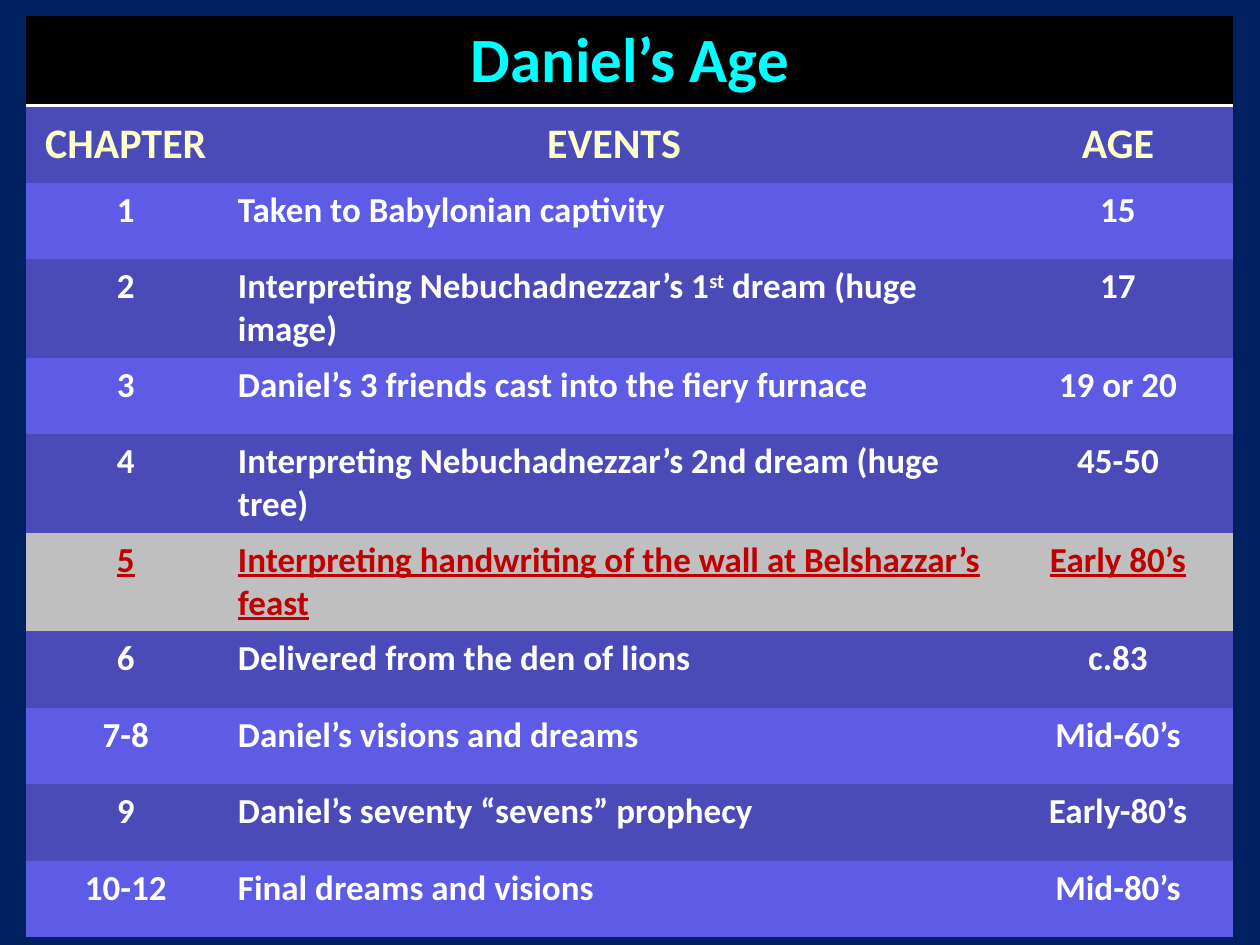
import dataclasses
import typing

import lxml.etree
import pptx
import pptx.dml.color
import pptx.enum.text
import pptx.oxml.ns
import pptx.util

Pt = pptx.util.Pt
RGBColor = pptx.dml.color.RGBColor
CENTER = pptx.enum.text.PP_ALIGN.CENTER
LEFT = pptx.enum.text.PP_ALIGN.LEFT
TOP = pptx.enum.text.MSO_ANCHOR.TOP
MIDDLE = pptx.enum.text.MSO_ANCHOR.MIDDLE


@dataclasses.dataclass(frozen=True)
class Theme:
    font: str = "Calibri"
    background: str = "002060"
    title_fill: str = "000000"
    title_text: str = "00FFFF"
    header_text: str = "FFFFCC"
    dark_band: str = "4A4AB9"
    light_band: str = "5C5CE7"
    highlight_fill: str = "BFBFBF"
    highlight_text: str = "C00000"
    body_text: str = "FFFFFF"
    rule: str = "FFFFFF"
    title_size: int = 36
    header_size: int = 24
    body_size: int = 20
    plain_table_style: str = "{2D5ABB26-0587-4C30-8999-92F81FD0307C}"


THEME = Theme()


class RowStyle(typing.NamedTuple):
    fill: str
    color: str
    size: int
    anchor: typing.Any = TOP
    underline: bool = False


class AgeRow(typing.NamedTuple):
    chapter: str
    event: str
    age: str
    height: float = 43.8
    highlighted: bool = False


TITLE = "Daniel’s Age"
TITLE_HEIGHT = 49
HEADER = AgeRow("CHAPTER", "EVENTS", "AGE")
TALL = 54
SUPERSCRIPT_MARK = "^"
AGE_ROWS = [
    AgeRow("1", "Taken to Babylonian captivity", "15"),
    AgeRow("2", "Interpreting Nebuchadnezzar’s 1^st^ dream (huge image)", "17", TALL),
    AgeRow("3", "Daniel’s 3 friends cast into the fiery furnace", "19 or 20"),
    AgeRow("4", "Interpreting Nebuchadnezzar’s 2nd dream (huge tree)", "45-50", TALL),
    AgeRow("5", "Interpreting handwriting of the wall at Belshazzar’s feast",
           "Early 80’s", TALL, True),
    AgeRow("6", "Delivered from the den of lions", "c.83"),
    AgeRow("7-8", "Daniel’s visions and dreams", "Mid-60’s"),
    AgeRow("9", "Daniel’s seventy “sevens” prophecy", "Early-80’s"),
    AgeRow("10-12", "Final dreams and visions", "Mid-80’s"),
]
COLUMN_WIDTHS = [113.8, 444.2, 131.8]
TITLE_STYLE = RowStyle(THEME.title_fill, THEME.title_text, THEME.title_size)
HEADER_STYLE = RowStyle(THEME.dark_band, THEME.header_text, THEME.header_size, MIDDLE)


def body_style(index: int, row: AgeRow) -> RowStyle:
    if row.highlighted:
        return RowStyle(THEME.highlight_fill, THEME.highlight_text,
                        THEME.body_size, underline=True)
    band = THEME.dark_band if index % 2 else THEME.light_band
    return RowStyle(band, THEME.body_text, THEME.body_size)


def fill_cell(cell: typing.Any, style: RowStyle) -> None:
    cell.fill.solid()
    cell.fill.fore_color.rgb = RGBColor.from_string(style.fill)


def write_cell(cell: typing.Any, text: str, style: RowStyle, alignment: typing.Any) -> None:
    cell.vertical_anchor = style.anchor
    paragraph = cell.text_frame.paragraphs[0]
    paragraph.alignment = alignment
    font_values = {"name": THEME.font, "size": Pt(style.size),
                   "bold": True, "underline": style.underline}
    for position, part in enumerate(text.split(SUPERSCRIPT_MARK)):
        run = paragraph.add_run()
        run.text = part
        for name, value in font_values.items():
            setattr(run.font, name, value)
        run.font.color.rgb = RGBColor.from_string(style.color)
        if position % 2:
            run._r.get_or_add_rPr().set("baseline", "30000")


def add_bottom_rule(cell: typing.Any, width: float) -> None:
    qualified = pptx.oxml.ns.qn
    line = lxml.etree.Element(qualified("a:lnB"), w=str(int(Pt(width))))
    solid_fill = lxml.etree.SubElement(line, qualified("a:solidFill"))
    lxml.etree.SubElement(solid_fill, qualified("a:srgbClr"), val=THEME.rule)
    cell._tc.get_or_add_tcPr().insert(0, line)


def write_row(table: typing.Any, index: int, row: AgeRow, style: RowStyle) -> None:
    table.rows[index].height = Pt(row.height)
    event_alignment = CENTER if row is HEADER else LEFT
    texts = (row.chapter, row.event, row.age)
    alignments = (CENTER, event_alignment, CENTER)
    for cell, text, alignment in zip(table.rows[index].cells, texts, alignments):
        fill_cell(cell, style)
        write_cell(cell, text, style, alignment)


def write_title(table: typing.Any) -> None:
    table.rows[0].height = Pt(TITLE_HEIGHT)
    cells = list(table.rows[0].cells)
    for cell in cells:
        fill_cell(cell, TITLE_STYLE)
        add_bottom_rule(cell, 2)
    cells[0].merge(cells[-1])
    write_cell(cells[0], TITLE, TITLE_STYLE, CENTER)


def add_age_table(slide: typing.Any) -> None:
    height = TITLE_HEIGHT + sum(row.height for row in [HEADER, *AGE_ROWS])
    shape = slide.shapes.add_table(
        len(AGE_ROWS) + 2, len(COLUMN_WIDTHS),
        Pt(15), Pt(9.2), Pt(sum(COLUMN_WIDTHS)), Pt(height))
    for style_id in shape.element.iter(pptx.oxml.ns.qn("a:tableStyleId")):
        style_id.text = THEME.plain_table_style
    table = shape.table
    for column, width in zip(table.columns, COLUMN_WIDTHS):
        column.width = Pt(width)
    write_title(table)
    write_row(table, 1, HEADER, HEADER_STYLE)
    for index, row in enumerate(AGE_ROWS):
        write_row(table, index + 2, row, body_style(index, row))


def main() -> None:
    presentation = pptx.Presentation()
    presentation.slide_width = Pt(720)
    presentation.slide_height = Pt(540)
    slide = presentation.slides.add_slide(presentation.slide_layouts[6])
    slide.background.fill.solid()
    slide.background.fill.fore_color.rgb = RGBColor.from_string(THEME.background)
    add_age_table(slide)
    presentation.save("out.pptx")


if __name__ == "__main__":
    main()
